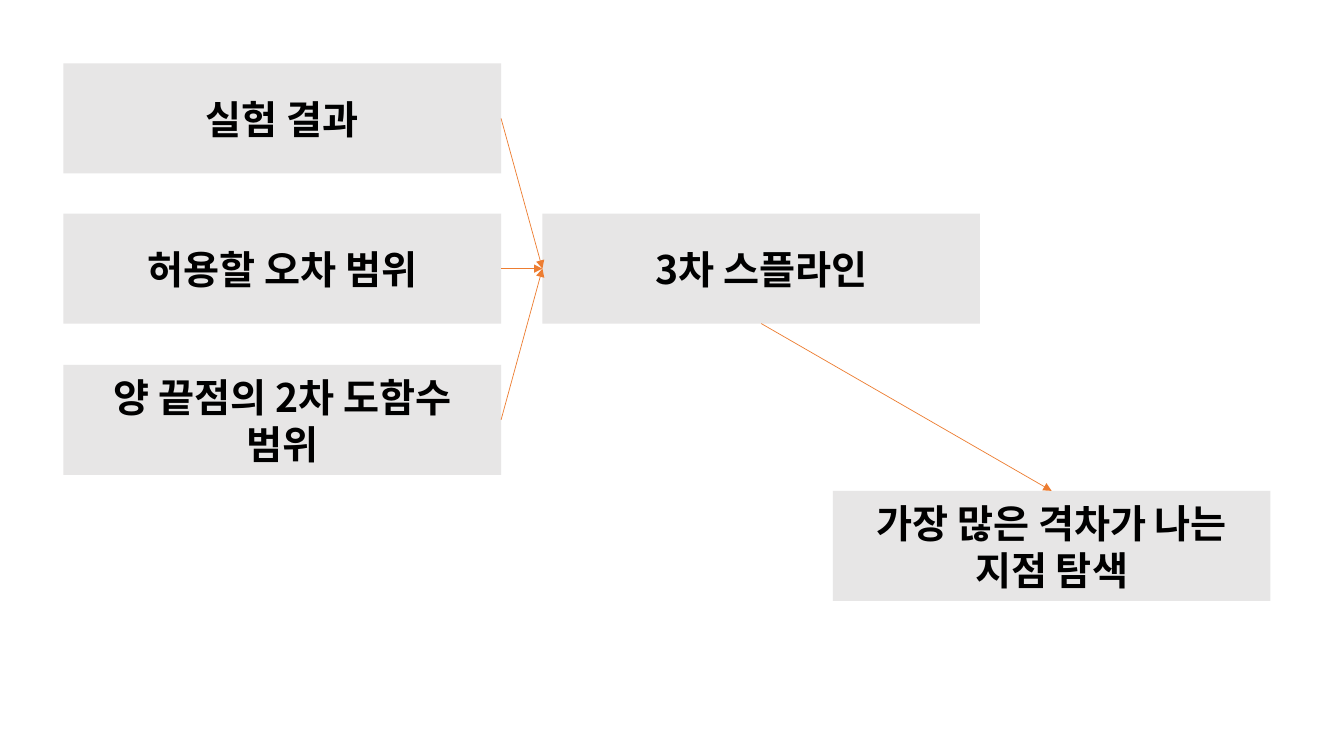
from lxml import etree
from pptx import Presentation
from pptx.dml.color import RGBColor
from pptx.enum.shapes import MSO_CONNECTOR, MSO_SHAPE
from pptx.enum.text import MSO_ANCHOR, PP_ALIGN
from pptx.oxml.ns import qn
from pptx.util import Pt

INPUTS = ["실험 결과", "허용할 오차 범위", "양 끝점의 2차 도함수 범위"]
SPLINE = "3차 스플라인"
SEARCH = "가장 많은 격차가 나는 지점 탐색"

COLORS = {"box": "E7E6E6", "text": "000000", "arrow": "ED7D31"}
FONT = "Noto Sans CJK KR"
PX = 9144
WIDTH, HEIGHT = 434, 109
LEFT, TOP = 63, 63
SPAN = 299
RECT = MSO_SHAPE.RECTANGLE
STRAIGHT = MSO_CONNECTOR.STRAIGHT
CENTER = PP_ALIGN.CENTER
MIDDLE = MSO_ANCHOR.MIDDLE
UP, WEST, DOWN, EAST = range(4)


def color(name):
    return RGBColor.from_string(COLORS[name])


def write(frame, text, size=28, bold=True, tint="text", align=CENTER):
    frame.word_wrap = True
    frame.vertical_anchor = MIDDLE
    para = frame.paragraphs[0]
    para.alignment = align
    run = para.add_run()
    run.text = text
    font = run.font
    font.name, font.size, font.bold = FONT, Pt(size), bold
    font.color.rgb = color(tint)
    east = etree.SubElement(run._r.get_or_add_rPr(), qn("a:ea"))
    east.set("typeface", FONT)


def add_box(slide, text, x, y):
    box = slide.shapes.add_shape(RECT, x * PX, y * PX, WIDTH * PX, HEIGHT * PX)
    box.shadow.inherit = False
    box.fill.solid()
    box.fill.fore_color.rgb = color("box")
    box.line.fill.background()
    write(box.text_frame, text)
    return box


def add_arrow(slide, start, side, end, target):
    arrow = slide.shapes.add_connector(STRAIGHT, 0, 0, 0, 0)
    arrow.begin_connect(start, side)
    arrow.end_connect(end, target)
    arrow.line.color.rgb = color("arrow")
    arrow.line.width = Pt(0.5)
    head = etree.SubElement(arrow.line._get_or_add_ln(), qn("a:tailEnd"))
    head.set("type", "triangle")
    etree.SubElement(arrow._element.spPr, qn("a:effectLst"))


def main():
    deck = Presentation()
    deck.slide_width, deck.slide_height = 1333 * PX, 750 * PX
    slide = deck.slides.add_slide(deck.slide_layouts[6])
    rows = [TOP + SPAN * i // 2 for i in range(len(INPUTS))]
    inputs = [add_box(slide, text, LEFT, y) for text, y in zip(INPUTS, rows)]
    spline = add_box(slide, SPLINE, 538, rows[1])
    search = add_box(slide, SEARCH, 826, 487)
    for box in inputs:
        add_arrow(slide, box, EAST, spline, WEST)
    add_arrow(slide, spline, DOWN, search, UP)
    deck.save("out.pptx")


if __name__ == "__main__":
    main()
